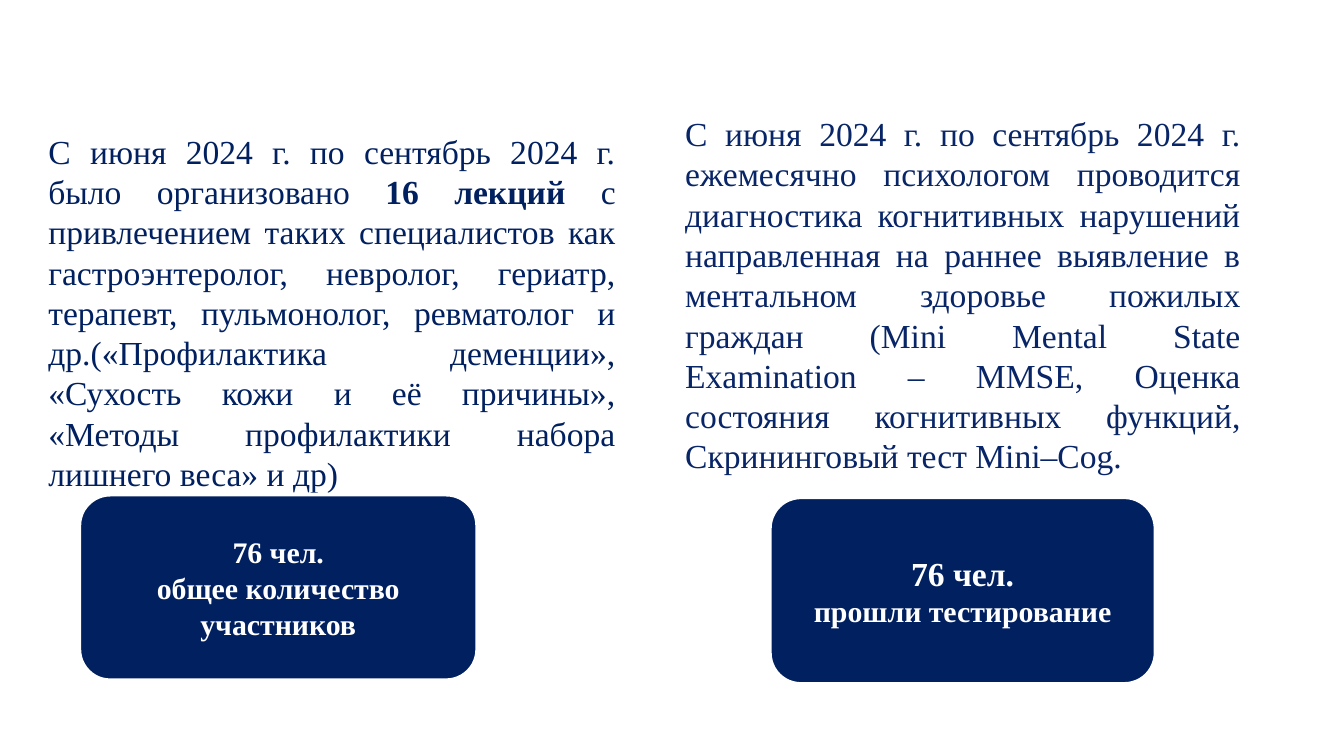
from lxml import etree
from pptx import Presentation
from pptx.dml.color import RGBColor
from pptx.enum.shapes import MSO_SHAPE as Preset
from pptx.enum.text import MSO_ANCHOR as Anchor, MSO_AUTO_SIZE as AutoSize, PP_ALIGN as Align
from pptx.oxml.ns import qn
from pptx.util import Cm, Pt

FONT = "Times New Roman"
NAVY, SAPPHIRE, WHITE = "002060", "082567", "FFFFFF"

LECTURES = [
    ("С июня 2024 г. по сентябрь 2024 г. было организовано ", False),
    ("16 лекций ", True),
    ("с привлечением таких специалистов как гастроэнтеролог, невролог, гериатр, "
     "терапевт, пульмонолог, ревматолог и др.(«Профилактика деменции», «Сухость кожи "
     "и её причины», «Методы профилактики набора лишнего веса» и др)", False),
]
TESTING = [
    ("С июня 2024 г. по сентябрь 2024 г. ежемесячно психологом проводится диагностика "
     "когнитивных нарушений направленная на раннее выявление в ментальном здоровье "
     "пожилых граждан (Mini Mental State Examination – MMSE, Оценка состояния "
     "когнитивных функций, Скрининговый тест Mini–Cog.", False),
]


def rgb(color):
    return RGBColor.from_string(color)


def format_run(run, size, color, bold):
    run.font.name = FONT
    run.font.size = Pt(size)
    run.font.bold = bold
    run.font.color.rgb = rgb(color)


def fill_description(shape, box, parts, color):
    """Justified paragraph without a bullet, placed in the given box."""
    shape.left, shape.top, shape.width, shape.height = [Cm(value) for value in box]
    text_frame = shape.text_frame
    text_frame.word_wrap = True
    text_frame.auto_size = AutoSize.NONE
    paragraph = text_frame.paragraphs[0]
    paragraph.alignment = Align.JUSTIFY
    paragraph.space_before = Pt(0)
    properties = paragraph._p.get_or_add_pPr()
    properties.set("marL", "0")
    properties.set("indent", "0")
    etree.SubElement(properties, qn("a:buNone"))
    for text, bold in parts:
        run = paragraph.add_run()
        run.text = text
        format_run(run, 18, color, bold)


def add_result_card(slide, box, lines):
    """Rounded card with a headcount and its caption."""
    shape = slide.shapes.add_shape(Preset.ROUNDED_RECTANGLE, *[Cm(value) for value in box])
    shape.shadow.inherit = False
    shape.fill.solid()
    shape.fill.fore_color.rgb = rgb(NAVY)
    shape.line.color.rgb = rgb(WHITE)
    shape.line.width = Pt(2)
    text_frame = shape.text_frame
    text_frame.word_wrap = True
    text_frame.vertical_anchor = Anchor.MIDDLE
    text_frame.text = "\n".join(text for text, size in lines)
    for paragraph, (text, size) in zip(text_frame.paragraphs, lines):
        paragraph.alignment = Align.CENTER
        format_run(paragraph.runs[0], size, WHITE, True)


def main():
    presentation = Presentation()
    presentation.slide_width, presentation.slide_height = Cm(25.4), Cm(14.29)
    slide = presentation.slides.add_slide(presentation.slide_layouts[1])
    title = slide.shapes.title
    title.element.getparent().remove(title.element)

    # Left column: lectures
    fill_description(slide.placeholders[1], (0.66, 2.34, 11.23, 6.81), LECTURES, NAVY)
    add_result_card(slide, (1.5, 9.35, 7.52, 3.51),
                    [("76 чел.", 16), ("общее количество участников", 16)])

    # Right column: cognitive testing
    add_result_card(slide, (14.55, 9.4, 7.29, 3.53),
                    [("76 чел.", 18), ("прошли тестирование", 16)])
    text_box = slide.shapes.add_textbox(0, 0, 0, 0)
    fill_description(text_box, (12.7, 2.01, 11, 7.19), TESTING, SAPPHIRE)

    presentation.save("out.pptx")


if __name__ == "__main__":
    main()
